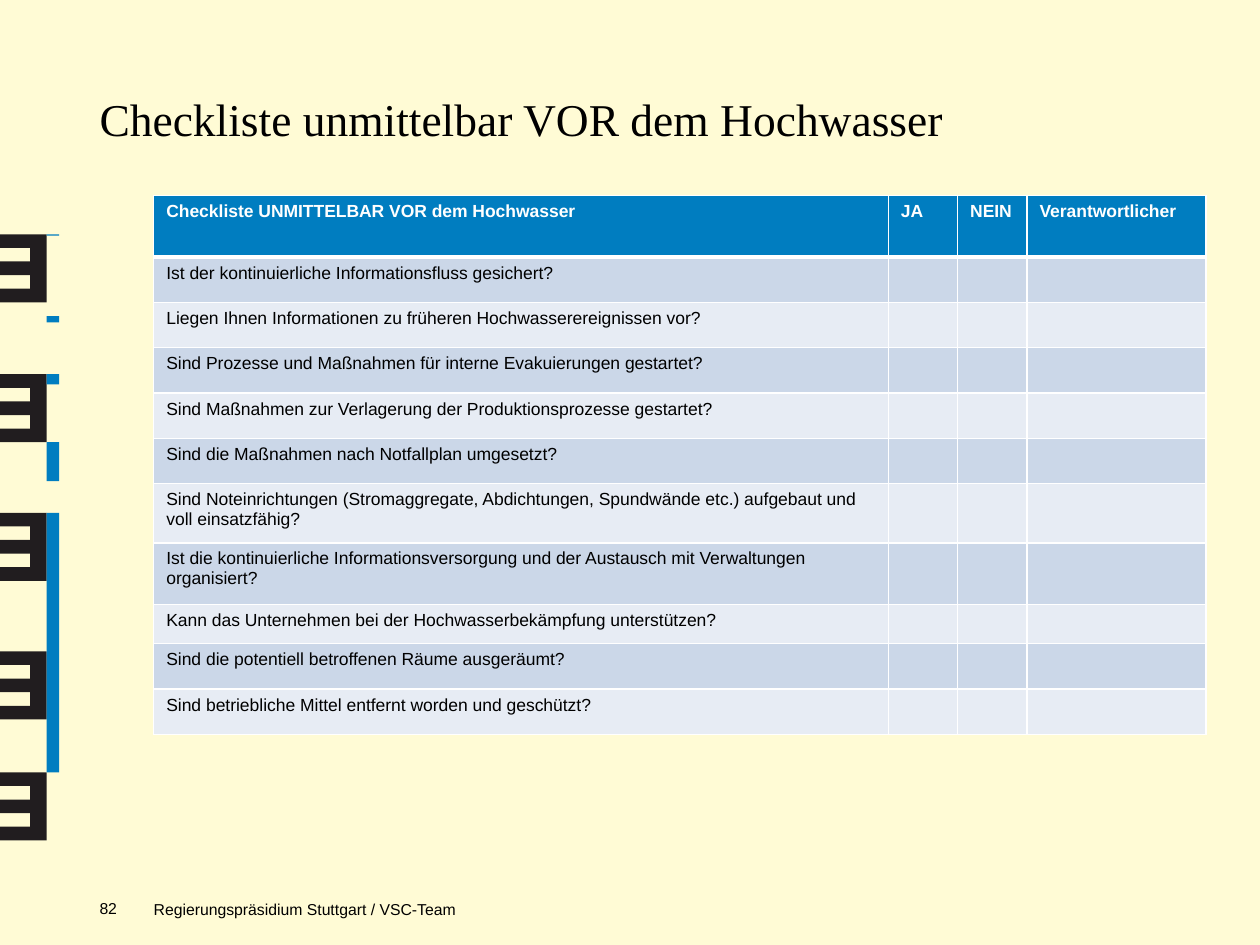
from lxml import etree
from pptx import Presentation
from pptx.dml.color import RGBColor
from pptx.enum.shapes import MSO_SHAPE
from pptx.enum.text import MSO_ANCHOR, PP_ALIGN
from pptx.oxml.ns import qn
from pptx.util import Inches, Pt

RECTANGLE = MSO_SHAPE.RECTANGLE
TOP, BOTTOM = MSO_ANCHOR.TOP, MSO_ANCHOR.BOTTOM
LEFT = PP_ALIGN.LEFT

CREAM = RGBColor(0xFF, 0xFB, 0xD5)
BLUE = RGBColor(0x00, 0x7D, 0xC0)
INK = RGBColor(0x21, 0x1D, 0x1F)
BLACK = RGBColor(0x00, 0x00, 0x00)
WHITE = RGBColor(0xFF, 0xFF, 0xFF)
BAND_DARK = RGBColor(0xCB, 0xD7, 0xE8)
BAND_LIGHT = RGBColor(0xE7, 0xEC, 0xF4)

TITLE_FONT = {"name": "Times New Roman", "size": Pt(26), "bold": False}
HEADER_FONT = {"name": "Arial", "size": Pt(10), "bold": True}
BODY_FONT = {"name": "Arial", "size": Pt(10), "bold": False}
FOOTER_FONT = {"name": "Arial", "size": Pt(9), "bold": False}

SLIDE_WIDTH, SLIDE_HEIGHT = 10, 7.5
HEADINGS = ["Checkliste UNMITTELBAR VOR dem Hochwasser", "JA", "NEIN", "Verantwortlicher"]
COLUMN_WIDTHS = [5.83, 0.55, 0.55, 1.42]
HEADER_HEIGHT = 0.49
QUESTIONS = [
    ("Ist der kontinuierliche Informationsfluss gesichert?", 0.36),
    ("Liegen Ihnen Informationen zu früheren Hochwasserereignissen vor?", 0.36),
    ("Sind Prozesse und Maßnahmen für interne Evakuierungen gestartet?", 0.36),
    ("Sind Maßnahmen zur Verlagerung der Produktionsprozesse gestartet?", 0.36),
    ("Sind die Maßnahmen nach Notfallplan umgesetzt?", 0.36),
    ("Sind Noteinrichtungen (Stromaggregate, Abdichtungen, Spundwände etc.) "
     "aufgebaut und voll einsatzfähig?", 0.47),
    ("Ist die kontinuierliche Informationsversorgung und der Austausch mit "
     "Verwaltungen organisiert?", 0.49),
    ("Kann das Unternehmen bei der Hochwasserbekämpfung unterstützen?", 0.31),
    ("Sind die potentiell betroffenen Räume ausgeräumt?", 0.36),
    ("Sind betriebliche Mittel entfernt worden und geschützt?", 0.36),
]

COMB_TOPS = [1.86, 2.97, 4.07, 5.17, 6.13]
COMB_WIDTH, COMB_HEIGHT, TOOTH_DEPTH = 0.37, 0.54, 0.24
BLUE_BARS = [(1.86, 0.01), (2.51, 0.05), (2.97, 0.08), (3.51, 0.31), (4.07, 2.06)]
BAR_WIDTH = 0.1


def set_font(font, color, values):
    for key, value in values.items():
        setattr(font, key, value)
    font.color.rgb = color


def set_frame(frame, text, color, font, margins=(0, 0, 0, 0), anchor=TOP):
    """Margins run left, top, right, bottom, in inches."""
    frame.word_wrap = True
    frame.vertical_anchor = anchor
    for side, margin in zip(("left", "top", "right", "bottom"), margins):
        setattr(frame, f"margin_{side}", Inches(margin))
    paragraph = frame.paragraphs[0]
    paragraph.alignment = LEFT
    run = paragraph.add_run()
    run.text = text
    set_font(run.font, color, font)


def paint(shape, color):
    shape.shadow.inherit = False
    shape.fill.solid()
    shape.fill.fore_color.rgb = color
    shape.line.fill.background()


def add_block(slide, color, left, top, width, height):
    block = slide.shapes.add_shape(RECTANGLE, Inches(left), Inches(top),
                                   Inches(width), Inches(height))
    paint(block, color)


def add_title(slide, text, left, top, width, height):
    """Fill the title and bring it in front of the backdrop."""
    title = slide.shapes.title
    title.left, title.top = Inches(left), Inches(top)
    title.width, title.height = Inches(width), Inches(height)
    set_frame(title.text_frame, text, BLACK, TITLE_FONT)
    slide.shapes._spTree.append(title._element)


def add_comb(slide, left, top, width, height):
    """Draw a block with two notches cut into its left side."""
    band = height / 5
    outline = [(left, top)]
    for notch in (1, 3):
        upper, lower = top + notch * band, top + (notch + 1) * band
        outline += [(left, upper), (left + TOOTH_DEPTH, upper),
                    (left + TOOTH_DEPTH, lower), (left, lower)]
    outline += [(left, top + height), (left + width, top + height), (left + width, top)]
    start, *corners = [(Inches(x), Inches(y)) for x, y in outline]
    builder = slide.shapes.build_freeform(*start)
    builder.add_line_segments(corners, close=True)
    paint(builder.convert_to_shape(), INK)


def add_side_ornament(slide, left):
    for top in COMB_TOPS:
        add_comb(slide, left, top, COMB_WIDTH, COMB_HEIGHT)
    for top, height in BLUE_BARS:
        add_block(slide, BLUE, left + COMB_WIDTH, top, BAR_WIDTH, height)


def add_borders(cell, widths):
    """Widths maps border tags, in schema order, to points."""
    properties = cell._tc.get_or_add_tcPr()
    for tag, points in widths.items():
        line = etree.SubElement(properties, qn(f"a:{tag}"), w=str(Pt(points)))
        fill = etree.SubElement(line, qn("a:solidFill"))
        etree.SubElement(fill, qn("a:srgbClr"), val=str(WHITE))


def format_cell(cell, text, fill, color, font, borders):
    add_borders(cell, borders)
    cell.fill.solid()
    cell.fill.fore_color.rgb = fill
    paragraph = cell.text_frame.paragraphs[0]
    if text:
        run = paragraph.add_run()
        run.text = text
        set_font(run.font, color, font)
    else:
        etree.SubElement(paragraph._p, qn("a:endParaRPr"), sz=str(int(font["size"].pt * 100)))


def add_checklist(slide, left, top):
    heights = [HEADER_HEIGHT] + [height for _, height in QUESTIONS]
    rows = [HEADINGS] + [[question, "", "", ""] for question, _ in QUESTIONS]
    frame = slide.shapes.add_table(len(rows), len(HEADINGS), Inches(left), Inches(top),
                                   Inches(sum(COLUMN_WIDTHS)), Inches(sum(heights)))
    table = frame.table
    for column, width in zip(table.columns, COLUMN_WIDTHS):
        column.width = Inches(width)
    for index, (texts, height) in enumerate(zip(rows, heights)):
        table.rows[index].height = Inches(height)
        borders = {"lnL": 1, "lnR": 1, "lnT": 3 if index == 1 else 1,
                   "lnB": 3 if index == 0 else 1}
        if index == 0:
            style = BLUE, WHITE, HEADER_FONT
        else:
            style = BAND_DARK if index % 2 else BAND_LIGHT, BLACK, BODY_FONT
        for column, text in enumerate(texts):
            format_cell(table.cell(index, column), text, *style, borders)


def add_footer_text(slide, text, left, top, width, height, **layout):
    box = slide.shapes.add_textbox(Inches(left), Inches(top), Inches(width), Inches(height))
    set_frame(box.text_frame, text, BLACK, FOOTER_FONT, **layout)


def main():
    presentation = Presentation()
    presentation.slide_width = Inches(SLIDE_WIDTH)
    presentation.slide_height = Inches(SLIDE_HEIGHT)
    slide = presentation.slides.add_slide(presentation.slide_layouts[5])

    add_block(slide, CREAM, 0, 0, SLIDE_WIDTH, SLIDE_HEIGHT)
    add_side_ornament(slide, 0)
    add_title(slide, "Checkliste unmittelbar VOR dem Hochwasser", 0.79, 0.72, 8.86, 0.94)
    add_checklist(slide, 1.22, 1.55)
    add_footer_text(slide, "Regierungspräsidium Stuttgart / VSC-Team", 1.22, 7.09, 3.54, 0.2,
                    margins=(0, 0.05, 0, 0), anchor=BOTTOM)
    add_footer_text(slide, "82", 0.79, 7.13, 0.3, 0.28)
    presentation.save("out.pptx")


if __name__ == "__main__":
    main()
